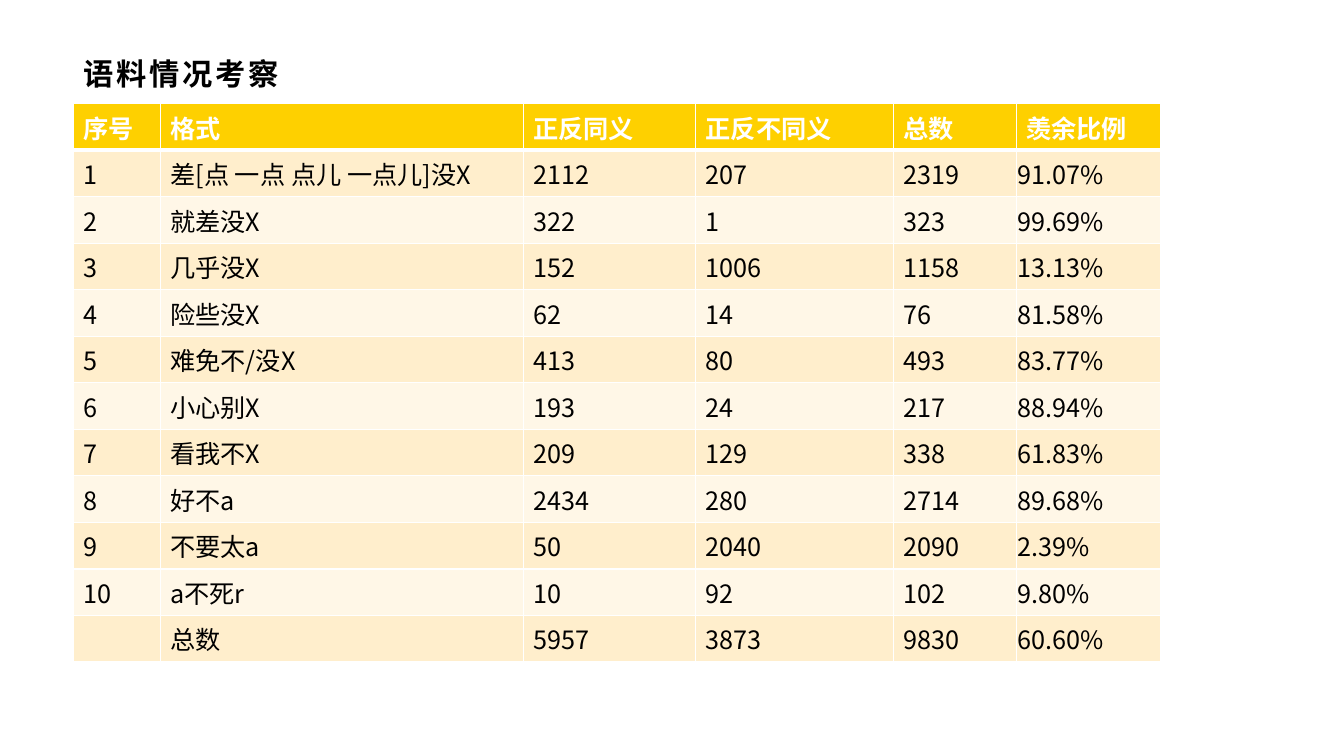
from dataclasses import dataclass
from lxml.etree import SubElement
from pptx import Presentation
from pptx.dml.color import RGBColor as Rgb
from pptx.enum.text import MSO_ANCHOR as Anchor
from pptx.oxml.ns import qn
from pptx.util import Inches, Pt

TITLE = "语料情况考察"
HEADS = ["序号", "格式", "正反同义", "正反不同义", "总数", "羡余比例"]
# pattern, same meaning, different meaning
COUNTS = [
    ("差[点 一点 点儿 一点儿]没X", 2112, 207),
    ("就差没X", 322, 1),
    ("几乎没X", 152, 1006),
    ("险些没X", 62, 14),
    ("难免不/没X", 413, 80),
    ("小心别X", 193, 24),
    ("看我不X", 209, 129),
    ("好不a", 2434, 280),
    ("不要太a", 50, 2040),
    ("a不死r", 10, 92),
]
TOTAL = "总数"
WIDTHS = [0.86, 3.6, 1.71, 1.96, 1.22, 1.43]
LEFT, TOP, HEIGHT = 0.73, 1.03, 5.54


@dataclass(frozen=True)
class Theme:
    black: str = "000000"
    white: str = "FFFFFF"
    head: str = "FED000"
    bands: tuple = ("FFEECC", "FFF7E7")
    latin: str = "Arial"
    cjk: str = "Noto Sans CJK SC"
    title: float = 21.6
    body: float = 18
    thin: float = 1
    thick: float = 3


THEME = Theme()


def add_run(frame, text, size, face, color, bold):
    run = frame.paragraphs[0].add_run()
    run.text = text
    font = run.font
    font.size, font.name, font.bold = Pt(size), face, bold
    font.color.rgb = Rgb.from_string(color)
    props = font._element
    SubElement(props, qn("a:ea")).set("typeface", THEME.cjk)
    return props


def add_edges(cell, top, bottom):
    """Draw white borders; top and bottom are line widths in points."""
    props = cell._tc.get_or_add_tcPr()
    sides = {"L": THEME.thin, "R": THEME.thin, "T": top, "B": bottom}
    for side, width in sides.items():
        line = SubElement(props, qn(f"a:ln{side}"), w=str(Pt(width)))
        fill = SubElement(line, qn("a:solidFill"))
        SubElement(fill, qn("a:srgbClr"), val=THEME.white)


def make_row(mark, name, same, diff):
    both = same + diff
    return [mark, name, str(same), str(diff), str(both), f"{same / both:.2%}"]


def make_rows():
    rows = [make_row(str(n), *count) for n, count in enumerate(COUNTS, 1)]
    sums = [sum(col) for col in list(zip(*COUNTS))[1:]]
    return [HEADS, *rows, make_row("", TOTAL, *sums)]


def add_title(slide):
    box = slide.shapes.add_textbox(
        Inches(LEFT), Inches(0.49), Inches(11.87), Inches(0.48))
    frame = box.text_frame
    frame.word_wrap = True
    frame.vertical_anchor = Anchor.MIDDLE
    props = add_run(frame, TITLE, THEME.title, THEME.latin, THEME.black, True)
    props.set("spc", "200")


def fill_cell(cell, text, r, c):
    head = r == 0
    add_edges(cell, THEME.thick if r == 1 else THEME.thin,
              THEME.thick if head else THEME.thin)
    cell.fill.solid()
    tint = THEME.head if head else THEME.bands[(r - 1) % 2]
    cell.fill.fore_color.rgb = Rgb.from_string(tint)
    if not head and c == len(HEADS) - 1:
        cell.vertical_anchor = Anchor.BOTTOM
        cell.margin_left = cell.margin_right = cell.margin_top = Inches(0.01)
    if text:
        face = THEME.latin if head else THEME.cjk
        color = THEME.white if head else THEME.black
        add_run(cell.text_frame, text, THEME.body, face, color, head)


def add_grid(slide):
    rows = make_rows()
    table = slide.shapes.add_table(
        len(rows), len(HEADS), Inches(LEFT), Inches(TOP),
        Inches(sum(WIDTHS)), Inches(HEIGHT)).table
    for col, width in zip(table.columns, WIDTHS):
        col.width = Inches(width)
    for r, row in enumerate(rows):
        table.rows[r].height = Inches(HEIGHT / len(rows))
        for c, text in enumerate(row):
            fill_cell(table.cell(r, c), text, r, c)


def main():
    deck = Presentation()
    deck.slide_width, deck.slide_height = Inches(13.33), Inches(7.5)
    slide = deck.slides.add_slide(deck.slide_layouts[6])
    add_title(slide)
    add_grid(slide)
    deck.save("out.pptx")


if __name__ == "__main__":
    main()
